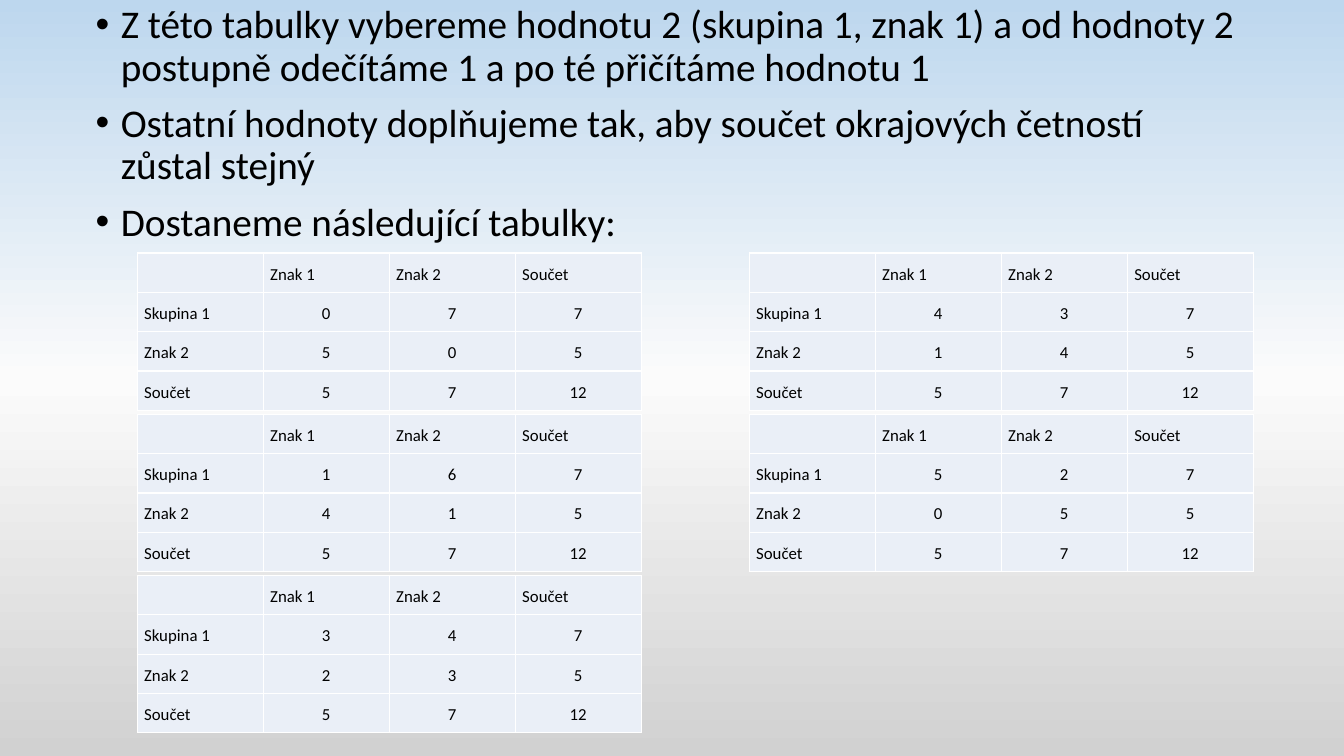
from dataclasses import dataclass

from lxml import etree
from pptx import Presentation
from pptx.dml.color import RGBColor
from pptx.enum.text import MSO_ANCHOR, PP_ALIGN
from pptx.oxml.ns import qn
from pptx.slide import Slide
from pptx.table import _Cell
from pptx.text.text import _Paragraph
from pptx.util import Inches, Pt

JUSTIFY, CENTER = PP_ALIGN.JUSTIFY, PP_ALIGN.CENTER
MIDDLE = MSO_ANCHOR.MIDDLE

FONT = "Calibri"
BLACK, WHITE, CELL_FILL = "000000", "FFFFFF", "EAEFF7"
BACKGROUND_STOPS = ((0, "BDD7EE"), (50, "FBFBFB"), (100, "D1D1D1"))
BODY_SIZE, TABLE_SIZE = 28, 12

# Grid in inches: each table is 4 x 4 cells
SLIDE_WIDTH, SLIDE_HEIGHT = 13.33, 7.5
CELL_WIDTH, CELL_HEIGHT = 1.25, 0.39
CELLS = 4
GRID_LEFT, GRID_TOP = 1.36, 2.51
COLUMN_GAP, ROW_GAP = 1.07, 0.04
COLUMN_STEP = CELLS * CELL_WIDTH + COLUMN_GAP
ROW_STEP = CELLS * CELL_HEIGHT + ROW_GAP

# Marginal totals shared by all tables
GROUP_TOTALS = (7, 5)
SIGN_1_TOTAL = 5

INSTRUCTIONS = (
    "Z této tabulky vybereme hodnotu 2 (skupina 1, znak 1) a od hodnoty 2 "
    "postupně odečítáme 1 a po té přičítáme hodnotu 1",
    "Ostatní hodnoty doplňujeme tak, aby součet okrajových četností zůstal stejný",
    "Dostaneme následující tabulky:",
)
HEADINGS = ("", "Znak 1", "Znak 2", "Součet")
ROW_LABELS = ("Skupina 1", "Znak 2", "Součet")


@dataclass(frozen=True)
class FrequencyTable:
    column: int
    row: int
    chosen: int  # value for group 1, sign 1

    def rows(self) -> list[tuple]:
        """Fill the table so that the marginal totals stay the same."""
        sign_1 = (self.chosen, SIGN_1_TOTAL - self.chosen, SIGN_1_TOTAL)
        totals = (*GROUP_TOTALS, sum(GROUP_TOTALS))
        counts = [(label, first, total - first, total)
                  for label, first, total in zip(ROW_LABELS, sign_1, totals)]
        return [HEADINGS, *counts]


FREQUENCY_TABLES = (
    FrequencyTable(0, 0, 0),
    FrequencyTable(0, 1, 1),
    FrequencyTable(0, 2, 3),
    FrequencyTable(1, 0, 4),
    FrequencyTable(1, 1, 5),
)


def colour(hex_value: str) -> RGBColor:
    return RGBColor.from_string(hex_value)


def add_run(paragraph: _Paragraph, text: str, size: int) -> None:
    run = paragraph.add_run()
    run.text = text
    run.font.name = FONT
    run.font.size = Pt(size)
    run.font.color.rgb = colour(BLACK)


def paint_background(slide: Slide) -> None:
    fill = slide.background.fill
    fill.gradient()
    fill.gradient_angle = 270
    stops = next(slide.element.iter(qn("a:gsLst")))
    for stop in list(stops):
        stops.remove(stop)
    for percent, hex_value in BACKGROUND_STOPS:
        stop = etree.SubElement(stops, qn("a:gs"), pos=str(percent * 1000))
        etree.SubElement(stop, qn("a:srgbClr"), val=hex_value)


def add_instructions(slide: Slide) -> None:
    box = slide.shapes.add_textbox(Inches(0.85), 0, Inches(11.5), Inches(6.76))
    frame = box.text_frame
    frame.word_wrap = True
    for index, instruction in enumerate(INSTRUCTIONS):
        paragraph = frame.add_paragraph() if index else frame.paragraphs[0]
        paragraph.line_spacing = 0.9
        paragraph.space_before = Pt(10)
        properties = paragraph._p.get_or_add_pPr()
        properties.set("marL", str(Inches(0.25)))
        properties.set("indent", str(-Inches(0.25)))
        etree.SubElement(properties, qn("a:buFont"), typeface="Arial")
        etree.SubElement(properties, qn("a:buChar"), char="•")
        add_run(paragraph, instruction, BODY_SIZE)


def add_borders(cell: _Cell) -> None:
    properties = cell._tc.get_or_add_tcPr()
    for index, side in enumerate(("lnL", "lnR", "lnT", "lnB")):
        line = etree.Element(qn(f"a:{side}"), w=str(Pt(1)))
        fill = etree.SubElement(line, qn("a:solidFill"))
        etree.SubElement(fill, qn("a:srgbClr"), val=WHITE)
        properties.insert(index, line)


def fill_cell(cell: _Cell, value: str | int) -> None:
    cell.fill.solid()
    cell.fill.fore_color.rgb = colour(CELL_FILL)
    add_borders(cell)
    cell.vertical_anchor = MIDDLE
    cell.margin_left = cell.margin_right = Inches(0.07)
    cell.margin_top = cell.margin_bottom = Inches(0.08)
    paragraph = cell.text_frame.paragraphs[0]
    paragraph.alignment = CENTER if isinstance(value, int) else JUSTIFY
    paragraph.line_spacing = 1.15
    if value == "":
        # Keep the empty corner cell as low as its row
        etree.SubElement(paragraph._p, qn("a:endParaRPr"), sz=str(TABLE_SIZE * 100))
    else:
        add_run(paragraph, str(value), TABLE_SIZE)


def add_frequency_table(slide: Slide, frequencies: FrequencyTable) -> None:
    table = slide.shapes.add_table(
        CELLS, CELLS,
        Inches(GRID_LEFT + frequencies.column * COLUMN_STEP),
        Inches(GRID_TOP + frequencies.row * ROW_STEP),
        Inches(CELLS * CELL_WIDTH), Inches(CELLS * CELL_HEIGHT),
    ).table
    table.first_row = table.horz_banding = False
    for row_index, values in enumerate(frequencies.rows()):
        for column_index, value in enumerate(values):
            fill_cell(table.cell(row_index, column_index), value)


def main() -> None:
    presentation = Presentation()
    presentation.slide_width = Inches(SLIDE_WIDTH)
    presentation.slide_height = Inches(SLIDE_HEIGHT)
    slide = presentation.slides.add_slide(presentation.slide_layouts[6])
    paint_background(slide)
    add_instructions(slide)
    for frequencies in FREQUENCY_TABLES:
        add_frequency_table(slide, frequencies)
    presentation.save("out.pptx")


if __name__ == "__main__":
    main()
